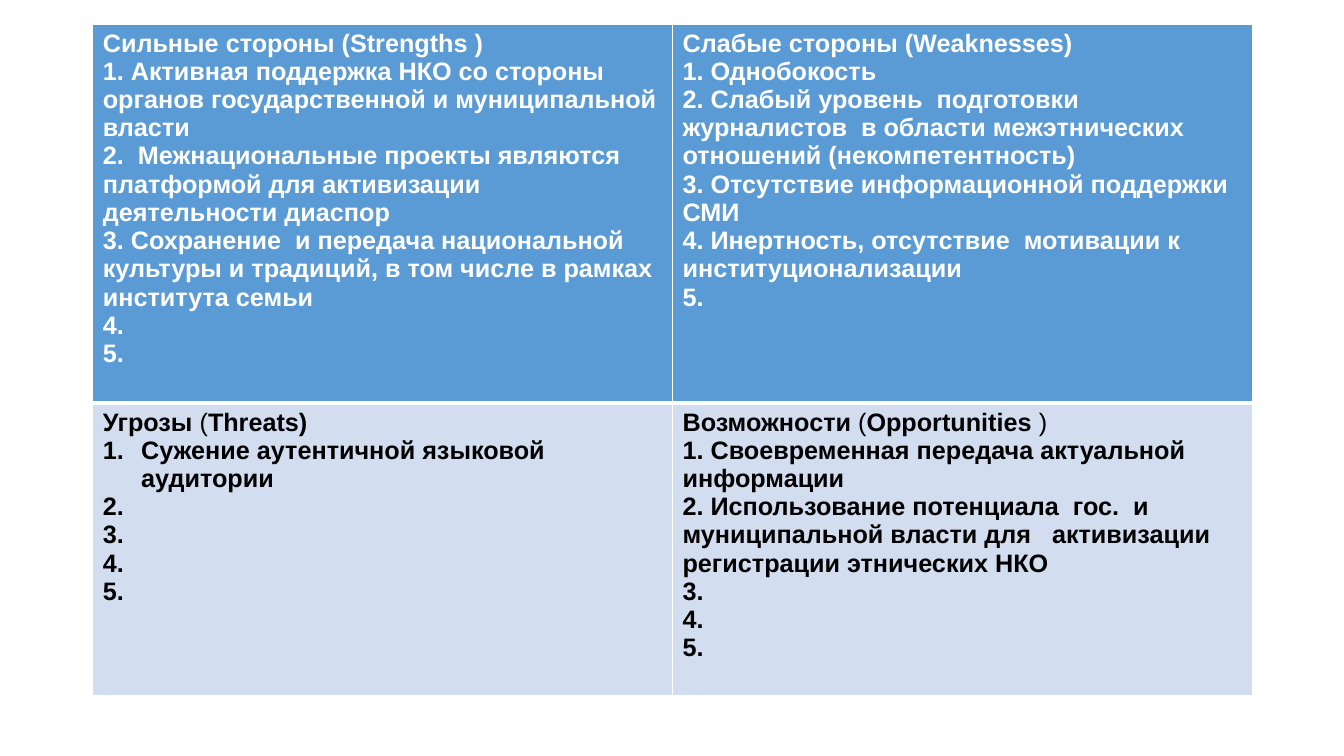
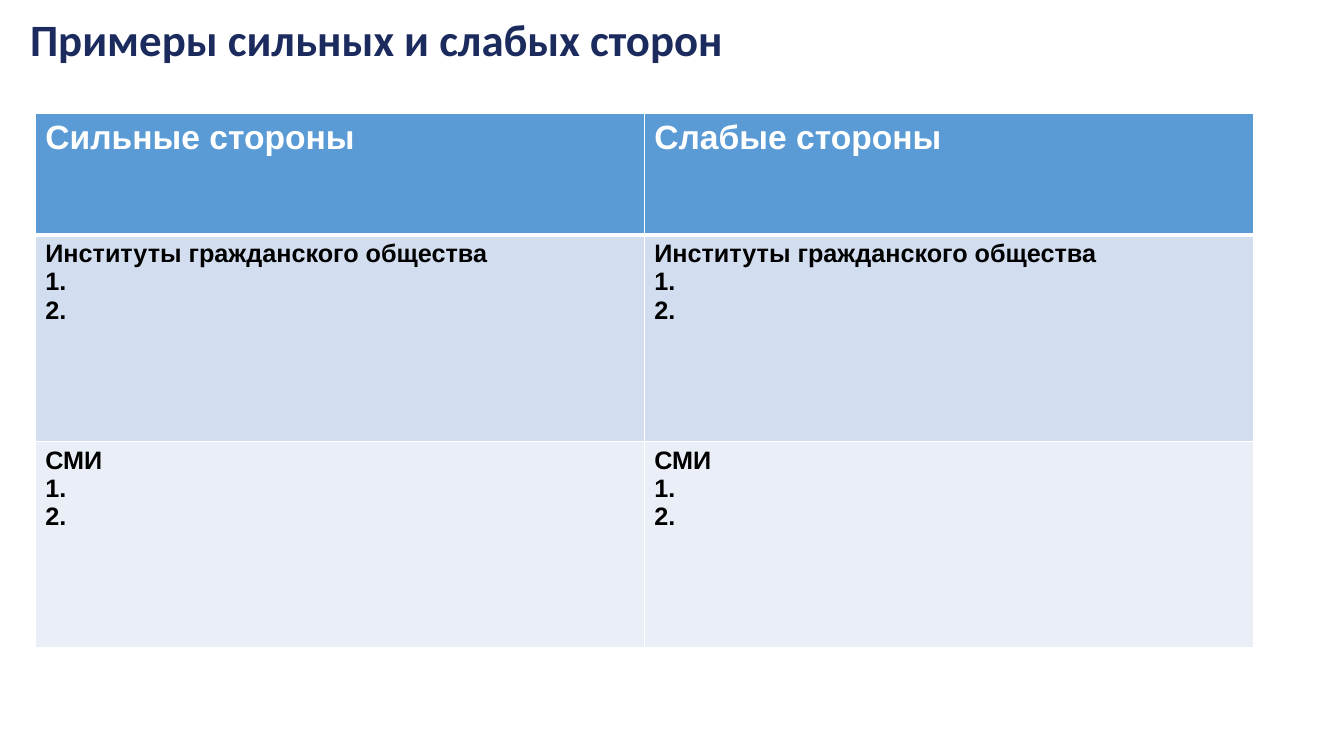
from dataclasses import dataclass

from lxml.etree import SubElement
from pptx import Presentation
from pptx.dml.color import RGBColor
from pptx.enum.text import MSO_ANCHOR
from pptx.oxml.ns import qn
from pptx.util import Inches, Pt

WHITE = RGBColor(0xFF, 0xFF, 0xFF)
BLACK = RGBColor(0x00, 0x00, 0x00)
NAVY = RGBColor(0x1B, 0x2B, 0x5D)
BLUE = RGBColor(0x5B, 0x9B, 0xD5)
PALE_BLUE = RGBColor(0xD2, 0xDE, 0xEF)
PALE_GREY = RGBColor(0xEA, 0xEF, 0xF7)


@dataclass
class Regular:
    text: str


@dataclass
class Numbered:
    text: str


class Deck:
    title_font = "Calibri"
    body_font = "Arial"
    row_fills = [BLUE, PALE_BLUE, PALE_GREY]

    def __init__(self):
        self.prs = Presentation()
        self.prs.slide_width = Inches(13.33)
        self.prs.slide_height = Inches(7.5)
        self.s = None

    def slide(self):
        self.s = self.prs.slides.add_slide(self.prs.slide_layouts[6])

    def run(self, p, text, font, size, color, bold=True):
        r = p.add_run()
        r.text = text
        r.font.name = font
        r.font.size = Pt(size)
        r.font.bold = bold
        r.font.color.rgb = color

    def title(self, text, left, top, width, height):
        tf = self.s.shapes.add_textbox(
            Inches(left), Inches(top), Inches(width), Inches(height)).text_frame
        tf.word_wrap = True
        tf.vertical_anchor = MSO_ANCHOR.TOP
        p = tf.paragraphs[0]
        p.line_spacing = 0.9
        self.run(p, text, self.title_font, 32, NAVY)

    def borders(self, cell, top, bottom):
        tc_pr = cell._tc.get_or_add_tcPr()
        for side, width in (("L", 1), ("R", 1), ("T", top), ("B", bottom)):
            ln = SubElement(tc_pr, qn(f"a:ln{side}"), w=str(Pt(width)))
            fill = SubElement(ln, qn("a:solidFill"))
            SubElement(fill, qn("a:srgbClr"), val=str(WHITE))

    def number(self, p):
        p_pr = p._p.get_or_add_pPr()
        indent = Inches(0.38)
        p_pr.set("marL", str(indent))
        p_pr.set("indent", str(-indent))
        SubElement(p_pr, qn("a:buFont"), typeface=self.body_font)
        SubElement(p_pr, qn("a:buAutoNum"), type="arabicPeriod")

    def cell(self, cell, paragraphs, row, size):
        self.borders(cell, 3 if row == 1 else 1, 3 if row == 0 else 1)
        cell.fill.solid()
        cell.fill.fore_color.rgb = self.row_fills[row]
        color = BLACK if row else WHITE
        tf = cell.text_frame
        for i, content in enumerate(paragraphs):
            p = tf.add_paragraph() if i else tf.paragraphs[0]
            if isinstance(content, Numbered):
                self.number(p)
                content = content.text
            for part in content if isinstance(content, list) else [content]:
                bold = isinstance(part, str)
                self.run(p, part if bold else part.text,
                         self.body_font, size, color, bold)

    def table(self, left, top, col_width, heights, rows, head_size=18):
        cols = len(rows[0])
        table = self.s.shapes.add_table(
            len(rows), cols, Inches(left), Inches(top),
            Inches(col_width * cols), Inches(sum(heights))).table
        table.horz_banding = False
        for col in table.columns:
            col.width = Inches(col_width)
        for i, (height, row) in enumerate(zip(heights, rows)):
            table.rows[i].height = Inches(height)
            for j, paragraphs in enumerate(row):
                self.cell(table.cell(i, j), paragraphs, i, 18 if i else head_size)


def main():
    deck = Deck()

    strengths = [
        "Сильные стороны (Strengths )",
        "1. Активная поддержка НКО со стороны органов государственной и муниципальной власти",
        "2.  Межнациональные проекты являются платформой для активизации деятельности диаспор",
        "3. Сохранение  и передача национальной культуры и традиций, в том числе в рамках института семьи",
        "4.",
        "5.",
    ]
    weaknesses = [
        "Слабые стороны (Weaknesses)",
        "1. Однобокость",
        "2. Слабый уровень  подготовки журналистов  в области межэтнических отношений (некомпетентность)",
        "3. Отсутствие информационной поддержки СМИ",
        "4. Инертность, отсутствие  мотивации к институционализации",
        "5.",
    ]
    threats = [
        ["Угрозы", Regular(" ("), "Threats)"],
        Numbered("Сужение аутентичной языковой аудитории"),
        "2.",
        "3.",
        "4.",
        "5.",
    ]
    opportunities = [
        ["Возможности ", Regular("("), "Opportunities", Regular(" )")],
        "1. Своевременная передача актуальной информации",
        "2. Использование потенциала  гос.  и муниципальной власти для   активизации  регистрации этнических НКО",
        "3.",
        "4.",
        "5.",
    ]
    deck.slide()
    deck.table(0.92, 0.24, 5.75, [3.76, 2.9],
               [[strengths, weaknesses], [threats, opportunities]])

    deck.slide()
    deck.title("Примеры сильных и слабых сторон", 0.2, 0.13, 8.24, 0.73)
    groups = ["Институты гражданского общества", "СМИ"]
    rows = [[["Сильные стороны"], ["Слабые стороны"]]]
    rows += [[[group, "1.", "2."]] * 2 for group in groups]
    deck.table(0.35, 1.13, 6.04, [1.2, 2.05, 2.05], rows, head_size=24)

    deck.prs.save("out.pptx")


if __name__ == "__main__":
    main()
